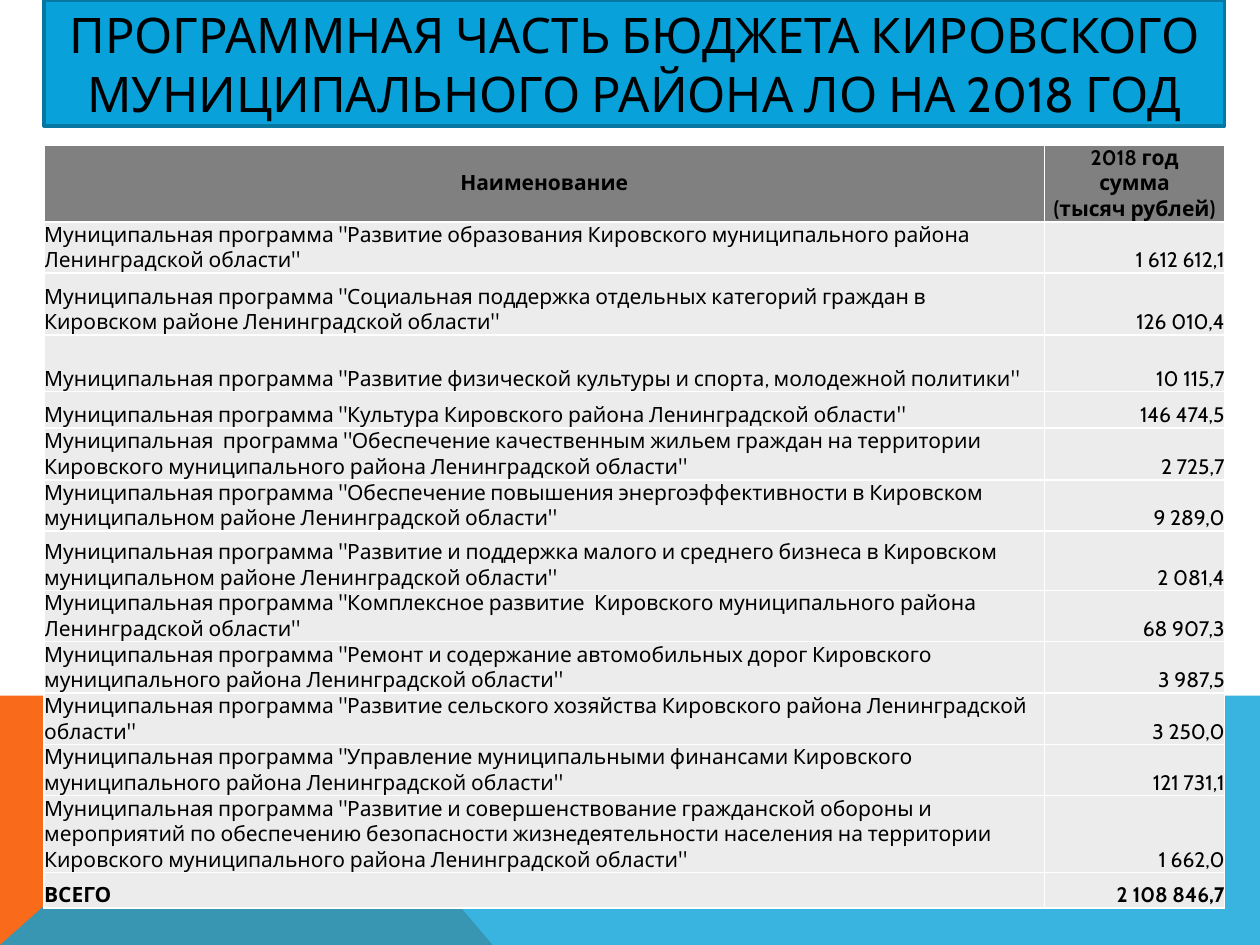
from lxml import etree
from pptx import Presentation
from pptx.dml.color import RGBColor
from pptx.enum.shapes import MSO_SHAPE
from pptx.enum.text import MSO_ANCHOR, MSO_AUTO_SIZE, PP_ALIGN
from pptx.oxml.ns import qn
from pptx.util import Inches, Pt

RECT = MSO_SHAPE.RECTANGLE
MIDDLE, BOTTOM = MSO_ANCHOR.MIDDLE, MSO_ANCHOR.BOTTOM
LEFT, CENTER, RIGHT = PP_ALIGN.LEFT, PP_ALIGN.CENTER, PP_ALIGN.RIGHT
NO_FIT = MSO_AUTO_SIZE.NONE

FONT = "Cabin"
WIDE, HIGH = 10, 7.5
COLS = [7.94, 1.43]
ROWS = [0.53, 0.34, 0.49, 0.45, 0.29, 0.41, 0.33, 0.47,
        0.33, 0.33, 0.33, 0.33, 0.51, 0.28]
TITLE = "ПРОГРАММНАЯ ЧАСТЬ БЮДЖЕТА КИРОВСКОГО МУНИЦИПАЛЬНОГО РАЙОНА ЛО НА 2018 ГОД"
HEAD = ("Наименование", "2018 год\nсумма\n(тысяч рублей)")
TOTAL = ("ВСЕГО", "2 108 846,7")
LEAD = "Муниципальная программа "
ITEMS = [
    (LEAD + '"Развитие образования Кировского муниципального района Ленинградской области"',
     "1 612 612,1"),
    (LEAD + '"Социальная поддержка отдельных категорий граждан в Кировском районе '
     'Ленинградской области"', "126 010,4"),
    (LEAD + '"Развитие физической культуры и спорта, молодежной политики"', "10 115,7"),
    (LEAD + '"Культура Кировского района Ленинградской области"', "146 474,5"),
    ('Муниципальная  программа "Обеспечение качественным жильем граждан на территории '
     'Кировского муниципального района Ленинградской области"', "2 725,7"),
    (LEAD + '"Обеспечение повышения энергоэффективности в Кировском муниципальном районе '
     'Ленинградской области"', "9 289,0"),
    (LEAD + '"Развитие и поддержка малого и среднего бизнеса в Кировском муниципальном '
     'районе Ленинградской области"', "2 081,4"),
    (LEAD + '"Комплексное развитие  Кировского муниципального района '
     'Ленинградской области"', "68 907,3"),
    (LEAD + '"Ремонт и содержание автомобильных дорог Кировского муниципального района '
     'Ленинградской области"', "3 987,5"),
    (LEAD + '"Развитие сельского хозяйства Кировского района Ленинградской области"',
     "3 250,0"),
    (LEAD + '"Управление муниципальными финансами Кировского муниципального района '
     'Ленинградской области"', "121 731,1"),
    (LEAD + '"Развитие и совершенствование гражданской обороны и мероприятий по '
     'обеспечению безопасности жизнедеятельности населения на территории Кировского '
     'муниципального района Ленинградской области"', "1 662,0"),
]


def paint(part, color):
    part.fill.solid()
    part.fill.fore_color.rgb = RGBColor.from_string(color)


def write(frame, text, size, align, bold=False):
    para = frame.paragraphs[0]
    para.text = text
    para.alignment = align
    look = {"name": FONT, "size": Pt(size), "bold": bold}
    for run in para.runs:
        for key, value in look.items():
            setattr(run.font, key, value)
        run.font.color.rgb = RGBColor.from_string("000000")


def add_wedge(slide, points, color, alpha=None):
    spots = [(Inches(x * WIDE), Inches(y * HIGH)) for x, y in points]
    build = slide.shapes.build_freeform(*spots[0])
    build.add_line_segments(spots[1:], close=True)
    shape = build.convert_to_shape()
    shape.shadow.inherit = False
    paint(shape, color)
    shape.line.fill.background()
    if alpha:
        tint = shape.element.spPr.find(".//" + qn("a:srgbClr"))
        etree.SubElement(tint, qn("a:alpha"), val=str(alpha * 1000))


def add_base(slide):
    top, peak = 0.736, 0.223
    add_wedge(slide, [(0, 1), (0, top), (peak, top), (0.391, 1)], "F96A1B")
    add_wedge(slide, [(0, 1), (peak, top), (1, top), (1, 1)], "08A1D9", 80)


def add_title(slide, box):
    # Banner
    banner = slide.shapes.add_shape(RECT, *box)
    banner.shadow.inherit = False
    paint(banner, "08A1D9")
    banner.line.color.rgb = RGBColor.from_string("0677A1")
    banner.line.width = Pt(2)
    # Title text, in front of the banner
    title = slide.shapes.title
    for key, value in zip(("left", "top", "width", "height"), box):
        setattr(title, key, value)
    frame = title.text_frame
    frame.auto_size = NO_FIT
    frame.word_wrap = True
    frame.vertical_anchor = MIDDLE
    write(frame, TITLE, 28, CENTER)
    banner.element.addnext(title.element)


def add_edges(cell):
    props = cell._tc.get_or_add_tcPr()
    for side in ("lnL", "lnR", "lnT", "lnB"):
        line = etree.SubElement(props, qn("a:" + side), w=str(Pt(1)))
        fill = etree.SubElement(line, qn("a:solidFill"))
        etree.SubElement(fill, qn("a:srgbClr"), val="FFFFFF")


def add_budget(slide, box):
    data = [HEAD, *ITEMS, TOTAL]
    table = slide.shapes.add_table(len(data), len(COLS), *box).table
    for col, width in zip(table.columns, COLS):
        col.width = Inches(width)
    for row, height in zip(table.rows, ROWS):
        row.height = Inches(height)
    for r, texts in enumerate(data):
        head = r == 0
        bold = head or r == len(data) - 1
        for c, text in enumerate(texts):
            cell = table.cell(r, c)
            add_edges(cell)
            paint(cell, "808080" if head else "ECECEC")
            for side in ("left", "right", "top", "bottom"):
                setattr(cell, "margin_" + side, 0)
            cell.vertical_anchor = MIDDLE if head else BOTTOM
            align = CENTER if head else (LEFT, RIGHT)[c]
            write(cell.text_frame, text, 12, align, bold)


def main():
    deck = Presentation()
    deck.slide_width, deck.slide_height = Inches(WIDE), Inches(HIGH)
    slide = deck.slides.add_slide(deck.slide_layouts[5])
    left, width = Inches(0.35), Inches(sum(COLS))
    add_base(slide)
    add_title(slide, (left, 0, width, Inches(1)))
    add_budget(slide, (left, Inches(1.15), width, Inches(sum(ROWS))))
    deck.save("out.pptx")


if __name__ == "__main__":
    main()
